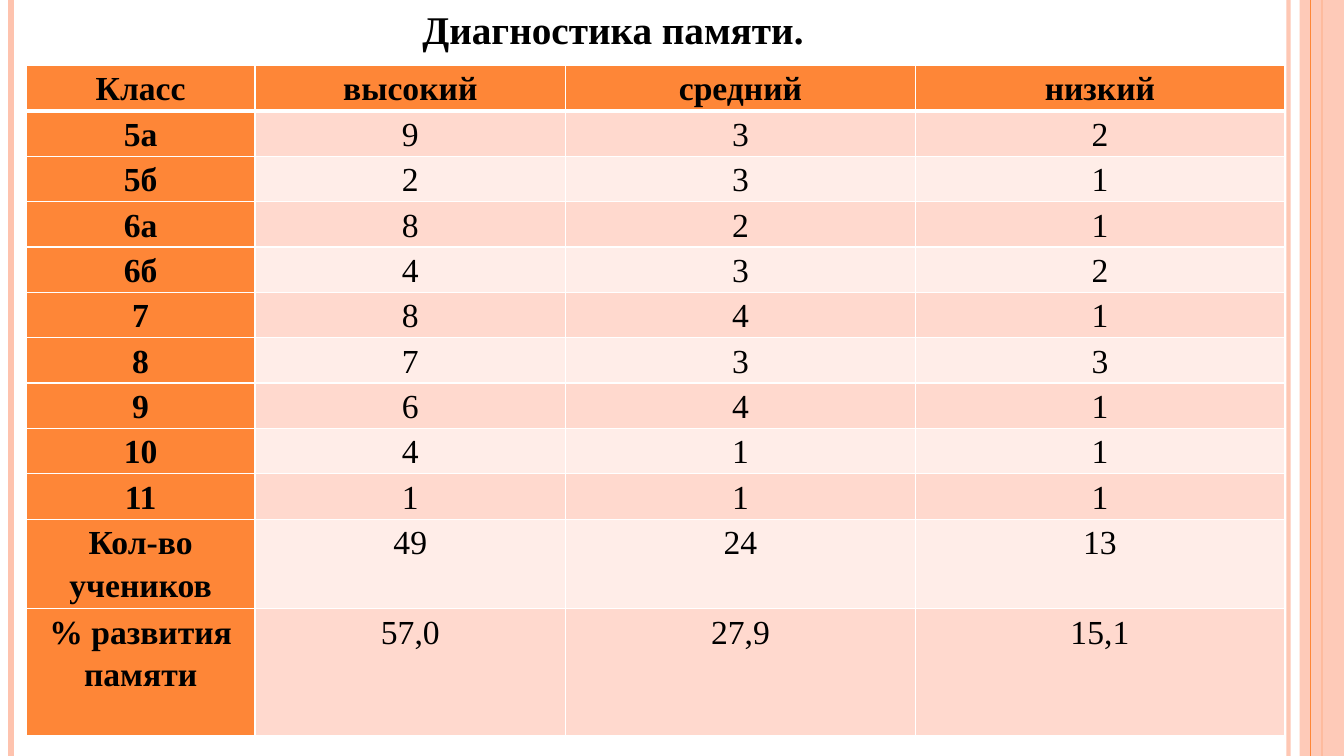
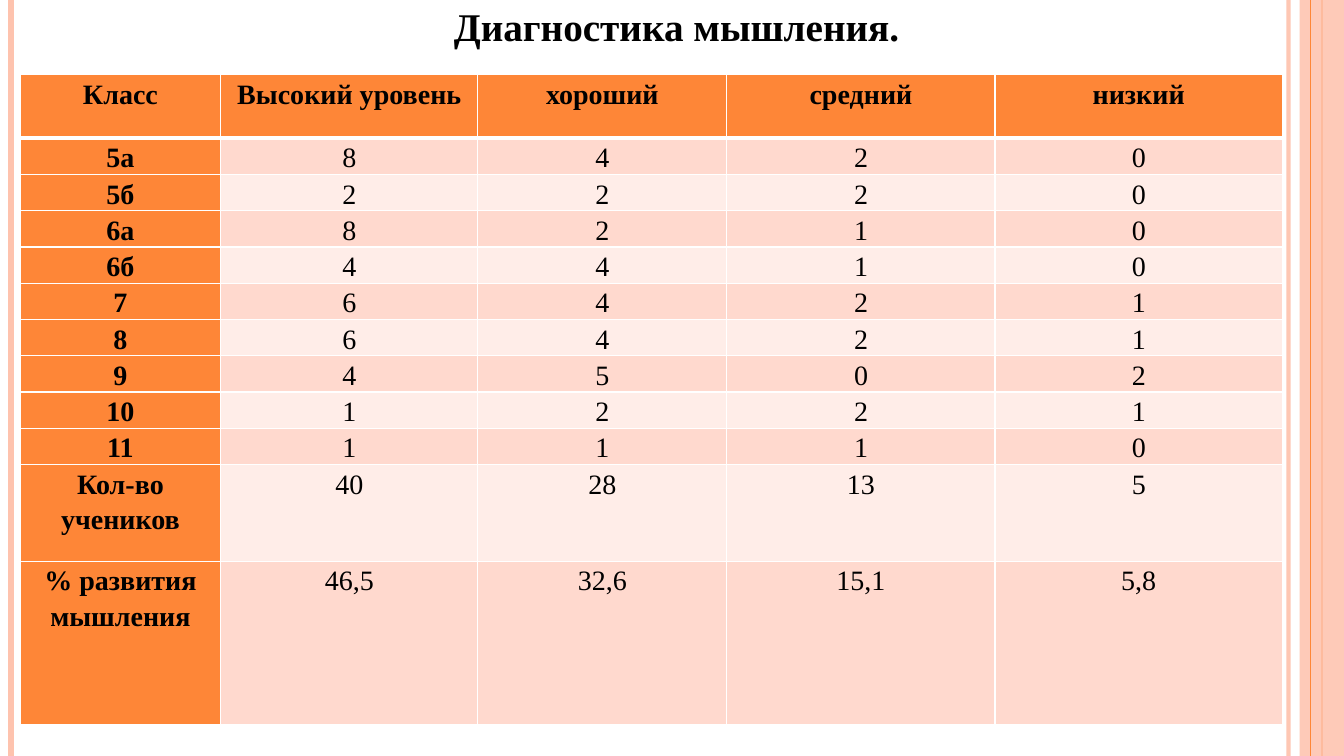
from dataclasses import dataclass

from pptx import Presentation
from pptx.dml.color import RGBColor
from pptx.enum.shapes import MSO_CONNECTOR, MSO_SHAPE
from pptx.enum.text import MSO_ANCHOR, PP_ALIGN
from pptx.oxml.ns import qn
from pptx.util import Inches, Pt
from lxml.etree import SubElement


@dataclass(frozen=True)
class Theme:
    font: str = "Times New Roman"
    title_size: int = 28
    text: str = "000000"
    white: str = "FFFFFF"
    accent: str = "FE8637"
    peach: str = "FEC3AE"
    bands: tuple = ("FFD9CE", "FFEDE8")
    grid_width: float = 1
    header_rule: float = 3


THEME = Theme()
SLIDE_W, SLIDE_H = 13.33, 7.5
CLASSES = ["5а", "5б", "6а", "6б", "7", "8", "9", "10", "11"]

MEMORY = dict(
    title="Диагностика памяти.",
    title_box=(3.68, 0, 4.8, 0.57),
    origin=(0.26, 0.65),
    widths=[2.27, 3.08, 3.47, 3.66],
    heights=[0.45] * 10 + [0.89, 1.26],
    size=24,
    header=["Класс", "высокий", "средний", "низкий"],
    labels=CLASSES + ["Кол-во учеников", "% развития памяти"],
    columns=[
        [9, 2, 8, 4, 8, 7, 6, 4, 1, 49, "57,0"],
        [3, 3, 2, 3, 4, 3, 4, 1, 1, 24, "27,9"],
        [2, 1, 1, 2, 1, 3, 1, 1, 1, 13, "15,1"],
    ],
)

THINKING = dict(
    title="Диагностика мышления.",
    title_box=(2.18, -0.03, 9.06, 0.57),
    origin=(0.2, 0.74),
    widths=[1.99, 2.55, 2.47, 2.66, 2.85],
    heights=[0.63] + [0.36] * 9 + [0.96, 1.62],
    size=20,
    header=["Класс", "Высокий уровень", "хороший", "средний", "низкий"],
    labels=CLASSES + ["Кол-во учеников", "% развития мышления"],
    columns=[
        [8, 2, 8, 4, 6, 6, 4, 1, 1, 40, "46,5"],
        [4, 2, 2, 4, 4, 4, 5, 2, 1, 28, "32,6"],
        [2, 2, 1, 1, 2, 2, 0, 2, 1, 13, "15,1"],
        [0, 0, 0, 0, 1, 1, 2, 1, 0, 5, "5,8"],
    ],
)


def rgb(color):
    return RGBColor.from_string(color)


def set_opacity(s, percent):
    for color in s.element.spPr.iter(qn("a:srgbClr")):
        SubElement(color, qn("a:alpha"), val=str(percent * 1000))


def write(tf, text, size, bold):
    tf.text = text
    p = tf.paragraphs[0]
    p.alignment = PP_ALIGN.CENTER
    font = p.runs[0].font
    font.name, font.size, font.bold = THEME.font, Pt(size), bold
    font.color.rgb = rgb(THEME.text)
    return p


def add_vertical_rule(slide, x, color, width):
    s = slide.shapes.add_connector(
        MSO_CONNECTOR.STRAIGHT, Inches(x), 0, Inches(x), Inches(SLIDE_H))
    s.line.color.rgb = rgb(color)
    s.line.width = Pt(width)
    SubElement(s.element.spPr, qn("a:effectLst"))
    return s


def add_side_bands(slide):
    set_opacity(add_vertical_rule(slide, 12.78, THEME.peach, 3), 93)
    add_vertical_rule(slide, 0.11, THEME.peach, 4.5)
    add_vertical_rule(slide, 13.11, THEME.accent, 1.5)
    band = slide.shapes.add_shape(
        MSO_SHAPE.RECTANGLE, Inches(12.89), 0, Inches(0.44), Inches(SLIDE_H))
    band.shadow.inherit = False
    band.fill.solid()
    band.fill.fore_color.rgb = rgb(THEME.peach)
    band.line.fill.background()
    set_opacity(band, 87)
    add_vertical_rule(slide, 13, THEME.accent, 0.75)


def add_title(slide, text, box):
    tf = slide.shapes.add_textbox(*map(Inches, box)).text_frame
    tf.word_wrap = True
    tf.vertical_anchor = MSO_ANCHOR.MIDDLE
    write(tf, text, THEME.title_size, True)


def set_borders(cell, row):
    widths = dict.fromkeys(("lnL", "lnR", "lnT", "lnB"), THEME.grid_width)
    if row == 0:
        widths["lnB"] = THEME.header_rule
    elif row == 1:
        widths["lnT"] = THEME.header_rule
    props = cell._tc.get_or_add_tcPr()
    for side, width in widths.items():
        ln = SubElement(props, qn(f"a:{side}"), w=str(Pt(width)))
        fill = SubElement(ln, qn("a:solidFill"))
        SubElement(fill, qn("a:srgbClr"), val=THEME.white)


def fill_cell(cell, text, row, is_heading, size):
    set_borders(cell, row)
    cell.fill.solid()
    cell.fill.fore_color.rgb = rgb(
        THEME.accent if is_heading else THEME.bands[(row - 1) % 2])
    cell.margin_left = cell.margin_right = Inches(0.07)
    cell.margin_top = cell.margin_bottom = 0
    write(cell.text_frame, text, size, is_heading).line_spacing = 1.15


def add_results_table(slide, origin, widths, heights, rows, size):
    box = (*origin, sum(widths), sum(heights))
    table = slide.shapes.add_table(
        len(rows), len(widths), *map(Inches, box)).table
    table.first_row = table.horz_banding = False
    for column, width in zip(table.columns, widths):
        column.width = Inches(width)
    for r, (row, height) in enumerate(zip(rows, heights)):
        table.rows[r].height = Inches(height)
        for c, value in enumerate(row):
            fill_cell(table.cell(r, c), str(value), r, r == 0 or c == 0, size)


def add_diagnostics_slide(prs, data):
    slide = prs.slides.add_slide(prs.slide_layouts[6])
    add_side_bands(slide)
    rows = [data["header"], *zip(data["labels"], *data["columns"])]
    add_results_table(slide, data["origin"], data["widths"],
                      data["heights"], rows, data["size"])
    add_title(slide, data["title"], data["title_box"])


def main():
    prs = Presentation()
    prs.slide_width, prs.slide_height = Inches(SLIDE_W), Inches(SLIDE_H)
    for data in (MEMORY, THINKING):
        add_diagnostics_slide(prs, data)
    prs.save("out.pptx")


if __name__ == "__main__":
    main()
